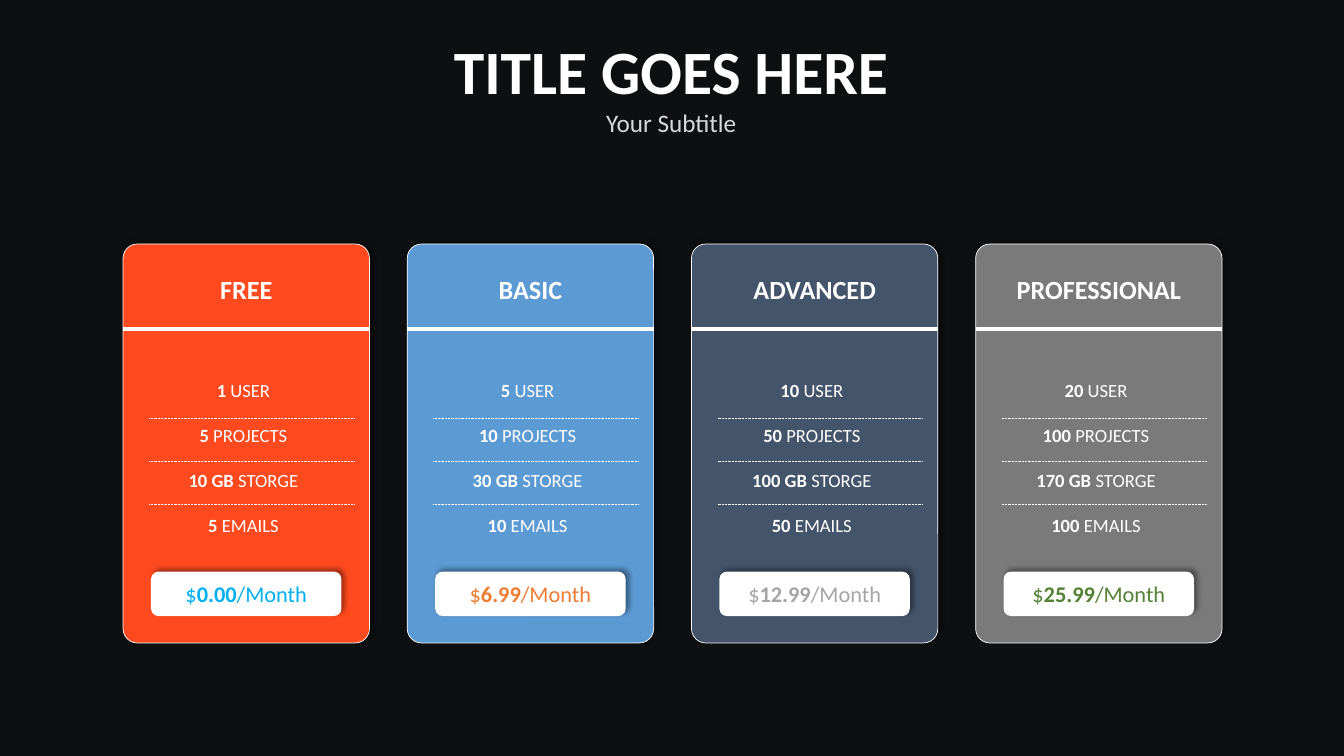
from lxml.etree import SubElement
from pptx import Presentation
from pptx.dml.color import RGBColor
from pptx.enum.dml import MSO_LINE
from pptx.enum.shapes import MSO_CONNECTOR as CONNECTOR, MSO_SHAPE as SHAPE
from pptx.enum.text import MSO_AUTO_SIZE as AUTO_SIZE, PP_ALIGN as ALIGN
from pptx.oxml.ns import qn
from pptx.util import Pt

# Content
TITLE = "TITLE GOES HERE"
SUBTITLE = "Your Subtitle"
FEATURES = [" USER", " PROJECTS", " STORGE", " EMAILS"]
PLANS = [
    dict(name="FREE", name_width=37.4, amounts=["1", "5", "10 GB", "5"],
         price="0.00", price_width=88, fill="FE4A1E", accent="00B0F0"),
    dict(name="BASIC", name_width=46, amounts=["5", "10", "30 GB", "10"],
         price="6.99", price_width=88, fill="5C9AD3", accent="ED7D31"),
    dict(name="ADVANCED", name_width=91.4, amounts=["10", "50", "100 GB", "50"],
         price="12.99", price_width=96, fill="44546B", accent="A5A5A5"),
    dict(name="PROFESSIONAL", name_width=118, amounts=["20", "100", "170 GB", "100"],
         price="25.99", price_width=96, fill="7A7A7A", accent="548235"),
]

THEME = dict(font="Calibri", background="0E0F11", light="FFFFFF", subtitle="D9D9D9",
             shadow="000000", title_size=44, subtitle_size=18, name_size=18.7,
             feature_size=13.3, price_size=16)

# Layout, in points
SLIDE_WIDTH, SLIDE_HEIGHT = 960, 540
CARD_WIDTH, CARD_HEIGHT, CARD_TOP, CARD_PITCH = 176, 285, 174.3, 203
FIRST_CARD = (SLIDE_WIDTH - 3 * CARD_PITCH - CARD_WIDTH) / 2 + 0.4
HEADER_RULE = 234.9
BUTTON_WIDTH, BUTTON_HEIGHT, BUTTON_TOP = 136, 31.8, 408.3
DIVIDER_INSET, DIVIDER_WIDTH, DIVIDER_TOP, DIVIDER_PITCH = 18.7, 146.2, 298.8, 30.6
FEATURE_GAP = 16.2

prs = Presentation()
prs.slide_width, prs.slide_height = Pt(SLIDE_WIDTH), Pt(SLIDE_HEIGHT)
slide = prs.slides.add_slide(prs.slide_layouts[6])
slide.background.fill.solid()
slide.background.fill.fore_color.rgb = RGBColor.from_string(THEME["background"])


def add_text(paragraphs, left, top, width, height, gap=0, inset=None, wrap=True):
    """Each paragraph is a list of (text, size, colour, bold) runs."""
    frame = slide.shapes.add_textbox(Pt(left), Pt(top), Pt(width), Pt(height)).text_frame
    frame.word_wrap = wrap
    frame.auto_size = AUTO_SIZE.SHAPE_TO_FIT_TEXT
    if inset is not None:
        frame.margin_left = frame.margin_right = Pt(inset)
        frame.margin_top = frame.margin_bottom = Pt(inset)
    for index, runs in enumerate(paragraphs):
        paragraph = frame.add_paragraph() if index else frame.paragraphs[0]
        paragraph.alignment = ALIGN.CENTER
        if index and gap:
            paragraph.space_before = Pt(gap)
        for text, size, colour, bold in runs:
            run = paragraph.add_run()
            run.text = text
            run.font.name, run.font.size, run.font.bold = THEME["font"], Pt(size), bold
            run.font.color.rgb = RGBColor.from_string(colour)


def add_panel(left, top, width, height, fill, corner=None, outline=None):
    """Rounded panel with a soft shadow to the upper right."""
    panel = slide.shapes.add_shape(SHAPE.ROUNDED_RECTANGLE,
                                   Pt(left), Pt(top), Pt(width), Pt(height))
    if corner is not None:
        panel.adjustments[0] = corner
    panel.fill.solid()
    panel.fill.fore_color.rgb = RGBColor.from_string(fill)
    if outline:
        panel.line.color.rgb = RGBColor.from_string(THEME["light"])
        panel.line.width = Pt(outline)
    else:
        panel.line.fill.background()
    panel.shadow.inherit = False
    effects = panel.element.spPr.find(qn("a:effectLst"))
    shadow = SubElement(effects, qn("a:outerShdw"), blurRad=str(Pt(4)), dist=str(Pt(3)),
                        dir=str(315 * 60000), algn="bl", rotWithShape="0")
    colour = SubElement(shadow, qn("a:srgbClr"), val=THEME["shadow"])
    SubElement(colour, qn("a:alpha"), val="40000")


def add_rule(left, top, width, weight, dash=None):
    rule = slide.shapes.add_connector(CONNECTOR.STRAIGHT, Pt(left), Pt(top),
                                      Pt(left + width), Pt(top))
    rule.line.color.rgb = RGBColor.from_string(THEME["light"])
    rule.line.width = Pt(weight)
    if dash:
        rule.line.dash_style = dash
    SubElement(rule.element.spPr, qn("a:effectLst"))


def add_plan(plan, left):
    centre = left + CARD_WIDTH / 2
    light = THEME["light"]

    # Card and header rule
    add_panel(left, CARD_TOP, CARD_WIDTH, CARD_HEIGHT, plan["fill"], corner=0.058, outline=0.5)
    add_rule(left, HEADER_RULE, CARD_WIDTH, 3)

    # Price button
    add_panel(centre - BUTTON_WIDTH / 2, BUTTON_TOP, BUTTON_WIDTH, BUTTON_HEIGHT, light)
    size, accent = THEME["price_size"], plan["accent"]
    price = [("$", size, accent, False), (plan["price"], size, accent, True),
             ("/Month", size, accent, False)]
    add_text([price], centre - plan["price_width"] / 2, 414.6, plan["price_width"], 19.5,
             inset=0, wrap=False)

    # Plan name
    add_text([[(plan["name"], THEME["name_size"], light, True)]],
             centre - plan["name_width"] / 2, 195.3, plan["name_width"], 22.5,
             inset=0, wrap=False)

    # Features and the dividers between them
    size = THEME["feature_size"]
    features = [[(amount, size, light, True), (feature, size, light, False)]
                for amount, feature in zip(plan["amounts"], FEATURES)]
    add_text(features, left + 2.5, 267, 167, 120.5, gap=FEATURE_GAP)
    for row in range(len(FEATURES) - 1):
        add_rule(left + DIVIDER_INSET, DIVIDER_TOP + row * DIVIDER_PITCH, DIVIDER_WIDTH,
                 0.5, dash=MSO_LINE.ROUND_DOT)


# Plans
for column, plan in enumerate(PLANS):
    add_plan(plan, FIRST_CARD + column * CARD_PITCH)

# Heading
add_text([[(TITLE, THEME["title_size"], THEME["light"], True)],
          [(SUBTITLE, THEME["subtitle_size"], THEME["subtitle"], False)]],
         262.8, 20.2, 433.4, 82)

prs.save("out.pptx")
